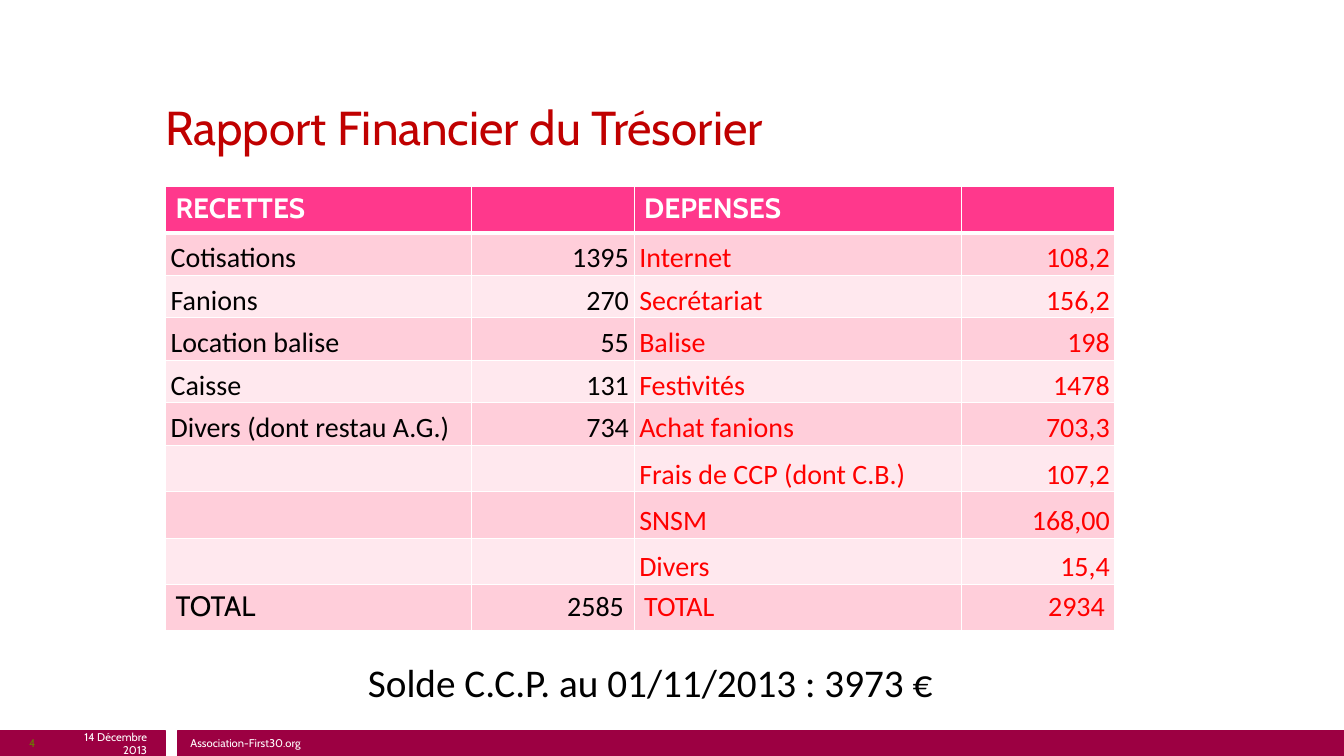
from lxml import etree
from pptx import Presentation
from pptx.dml.color import RGBColor
from pptx.enum.shapes import MSO_SHAPE
from pptx.enum.text import MSO_ANCHOR, PP_ALIGN
from pptx.oxml.ns import qn
from pptx.util import Cm, Pt

LEFT, CENTER, RIGHT = PP_ALIGN.LEFT, PP_ALIGN.CENTER, PP_ALIGN.RIGHT
TOP, MIDDLE, BOTTOM = MSO_ANCHOR.TOP, MSO_ANCHOR.MIDDLE, MSO_ANCHOR.BOTTOM
RECTANGLE = MSO_SHAPE.RECTANGLE

TITLE = "Rapport Financier du Trésorier"
BALANCE = "Solde C.C.P. au 01/11/2013 : 3973 €"
ROWS = [
    ("RECETTES", "", "DEPENSES", ""),
    ("Cotisations", "1395", "Internet", "108,2"),
    ("Fanions", "270", "Secrétariat", "156,2"),
    ("Location balise", "55", "Balise", "198"),
    ("Caisse", "131", "Festivités", "1478"),
    ("Divers (dont restau A.G.)", "734", "Achat fanions", "703,3"),
    ("", "", "Frais de CCP (dont C.B.)", "107,2"),
    ("", "", "SNSM", "168,00"),
    ("", "", "Divers", "15,4"),
    ("TOTAL", "2585", "TOTAL", "2934"),
]
COLUMN_WIDTHS = [7.72, 4.09, 8.26, 3.86]
ROW_HEIGHTS = [1.17] + [1.07] * 5 + [1.17] * 4

THEME = {
    "heading": "Cabin", "body": "Calibri",
    "title": "C00000", "bar": "9C0042", "number": "688000",
    "header": "FF388C", "bands": ("FFCEDA", "FFE8EE"),
    "white": "FFFFFF", "income": "000000", "expense": "FF0000",
    "title_size": 34, "balance_size": 28, "table_size": 20, "footer_size": 8,
}

FOOTER_TOP, FOOTER_HEIGHT = 18.42, 0.63
BARS = [(0, 4.17), (4.47, 29.4)]
# text, left, width, alignment, colour
FOOTERS = [
    ("4", 0, 1.14, RIGHT, THEME["number"]),
    ("14 Décembre 2013", 1.3, 2.66, RIGHT, THEME["white"]),
    ("Association-First30.org", 4.55, 25.4, LEFT, THEME["white"]),
]


def rgb(value):
    return RGBColor.from_string(value)


def write(tf, text, size, color, font=THEME["heading"], align=LEFT, bold=False):
    p = tf.paragraphs[0]
    p.alignment = align
    r = p.add_run()
    r.text = text
    r.font.color.rgb = rgb(color)
    for name, value in {"size": Pt(size), "name": font, "bold": bold}.items():
        setattr(r.font, name, value)
    return p


def add_text(s, box, text, anchor, **style):
    tf = s.shapes.add_textbox(*map(Cm, box)).text_frame
    tf.word_wrap = True
    tf.vertical_anchor = anchor
    write(tf, text, **style)


def add_borders(cell, bottom):
    """Draw white cell edges, with the bottom one of the given width in points."""
    tc_pr = cell._tc.get_or_add_tcPr()
    for index, (edge, width) in enumerate(
            {"lnL": 1, "lnR": 1, "lnT": 1, "lnB": bottom}.items()):
        line = etree.Element(qn(f"a:{edge}"), w=str(Pt(width)))
        fill = etree.SubElement(line, qn("a:solidFill"))
        etree.SubElement(fill, qn("a:srgbClr"), val=THEME["white"])
        tc_pr.insert(index, line)


def format_cell(cell, text, row, column):
    header, total = row == 0, row == len(ROWS) - 1
    cell.fill.solid()
    cell.fill.fore_color.rgb = rgb(
        THEME["header"] if header else THEME["bands"][(row - 1) % 2])
    add_borders(cell, 3 if header else 1)
    if not text:
        return
    color = THEME["white"] if header else THEME["income" if column < 2 else "expense"]
    heading = header or (total and column == 0)
    p = write(cell.text_frame, text, THEME["table_size"], color,
              THEME["heading" if heading else "body"],
              RIGHT if column % 2 else LEFT, header)
    if not (header or total):
        p.line_spacing = 1.15
        layout = {"vertical_anchor": BOTTOM, "margin_left": Cm(0.13),
                  "margin_right": Cm(0.13), "margin_top": 0, "margin_bottom": 0}
        for name, value in layout.items():
            setattr(cell, name, value)


def add_accounts(s):
    box = (4.17, 4.7, sum(COLUMN_WIDTHS), sum(ROW_HEIGHTS))
    table = s.shapes.add_table(len(ROWS), len(COLUMN_WIDTHS), *map(Cm, box)).table
    for column, width in zip(table.columns, COLUMN_WIDTHS):
        column.width = Cm(width)
    for row, height in zip(table.rows, ROW_HEIGHTS):
        row.height = Cm(height)
    for i, values in enumerate(ROWS):
        for j, text in enumerate(values):
            format_cell(table.cell(i, j), text, i, j)


def add_footer(s):
    for left, width in BARS:
        bar = s.shapes.add_shape(
            RECTANGLE, *map(Cm, (left, FOOTER_TOP, width, FOOTER_HEIGHT)))
        bar.shadow.inherit = False
        bar.fill.solid()
        bar.fill.fore_color.rgb = bar.line.color.rgb = rgb(THEME["bar"])
        bar.line.width = Pt(1)
    for text, left, width, align, color in FOOTERS:
        add_text(s, (left, FOOTER_TOP, width, FOOTER_HEIGHT), text, MIDDLE,
                 size=THEME["footer_size"], color=color, align=align)


def add_title(s):
    title = s.shapes.title
    box = {"left": 3.91, "top": 0.76, "width": 26.04, "height": 3.28}
    for name, value in box.items():
        setattr(title, name, Cm(value))
    title.text_frame.vertical_anchor = BOTTOM
    write(title.text_frame, TITLE, THEME["title_size"], THEME["title"])


def main():
    prs = Presentation()
    prs.slide_width, prs.slide_height = Cm(33.87), Cm(19.05)
    s = prs.slides.add_slide(prs.slide_layouts[5])
    add_footer(s)
    add_title(s)
    add_accounts(s)
    add_text(s, (4.47, 16.46, 23.83, 2.24), BALANCE, TOP, font=THEME["body"],
             size=THEME["balance_size"], color=THEME["income"], align=CENTER)
    prs.save("out.pptx")


if __name__ == "__main__":
    main()
